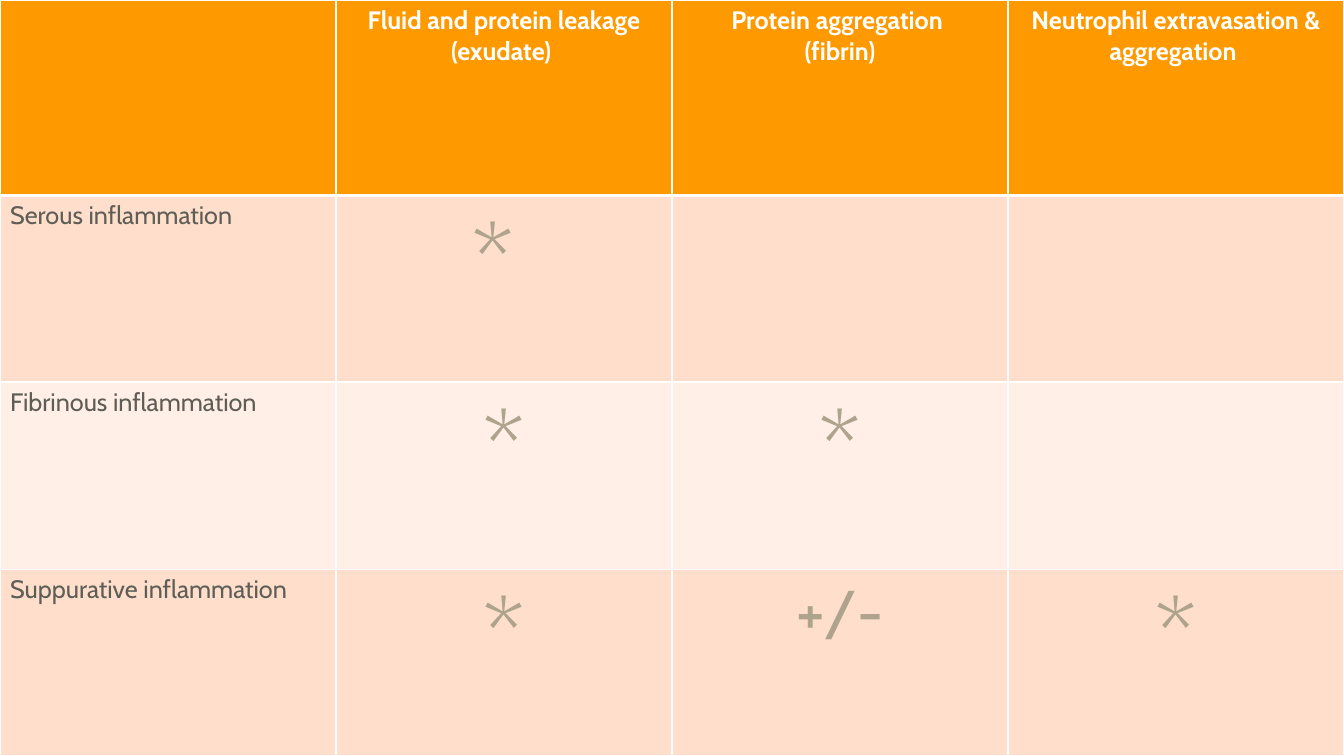
from lxml.etree import SubElement
from pptx import Presentation
from pptx.dml.color import RGBColor
from pptx.enum.text import PP_ALIGN
from pptx.oxml.ns import qn
from pptx.util import Inches, Pt

FONT = "Cabin"
WHITE = RGBColor(0xFF, 0xFF, 0xFF)
ORANGE = RGBColor(0xFF, 0x99, 0x00)
PEACH = RGBColor(0xFF, 0xDE, 0xCC)
PALE = RGBColor(0xFF, 0xEF, 0xE7)
GREY = RGBColor(0x5E, 0x5E, 0x56)
TAUPE = RGBColor(0xAE, 0xA3, 0x8C)

ROWS = [
    ["", "Fluid and protein leakage (exudate) ", "Protein aggregation \n(fibrin)",
     "Neutrophil extravasation & aggregation "],
    ["Serous inflammation", "* ", "", ""],
    ["Fibrinous inflammation", "*", "*", ""],
    ["Suppurative inflammation", "*", "+/-", "*"],
]
ROW_FILLS = [ORANGE, PEACH, PALE, PEACH]
ROW_HEIGHTS = [1.94, 1.85, 1.86, 1.85]
WIDTH, HEIGHT = 13.33, 7.5


def text_style(row, col, text):
    """Return size, colour and boldness for a cell."""
    if row == 0:
        return 18, WHITE, True
    if col == 0:
        return 18, GREY, False
    return (44 if text == "+/-" else 72), TAUPE, False


def add_borders(cell, row):
    """Draw white borders, heavier on both sides of the line under the header."""
    tc_pr = cell._tc.get_or_add_tcPr()
    widths = {"a:lnL": 1, "a:lnR": 1,
              "a:lnT": 3 if row == 1 else 1, "a:lnB": 3 if row == 0 else 1}
    for tag, width in widths.items():
        line = SubElement(tc_pr, qn(tag), w=str(Pt(width)))
        fill = SubElement(line, qn("a:solidFill"))
        SubElement(fill, qn("a:srgbClr"), val=str(WHITE))


prs = Presentation()
prs.slide_width, prs.slide_height = Inches(WIDTH), Inches(HEIGHT)
s = prs.slides.add_slide(prs.slide_layouts[6])
s.background.fill.solid()
s.background.fill.fore_color.rgb = GREY

table = s.shapes.add_table(len(ROWS), len(ROWS[0]), 0, 0,
                           Inches(WIDTH), Inches(sum(ROW_HEIGHTS))).table
for column in table.columns:
    column.width = Inches(WIDTH / len(ROWS[0]))

for r, (texts, fill, height) in enumerate(zip(ROWS, ROW_FILLS, ROW_HEIGHTS)):
    table.rows[r].height = Inches(height)
    for c, text in enumerate(texts):
        cell = table.cell(r, c)
        add_borders(cell, r)
        cell.fill.solid()
        cell.fill.fore_color.rgb = fill
        cell.text = text
        size, color, bold = text_style(r, c, text)
        for p in cell.text_frame.paragraphs:
            p.alignment = PP_ALIGN.CENTER if c else PP_ALIGN.LEFT
            p.font.name = FONT
            p.font.size = Pt(size)
            p.font.bold = bold
            p.font.color.rgb = color

prs.save("out.pptx")
